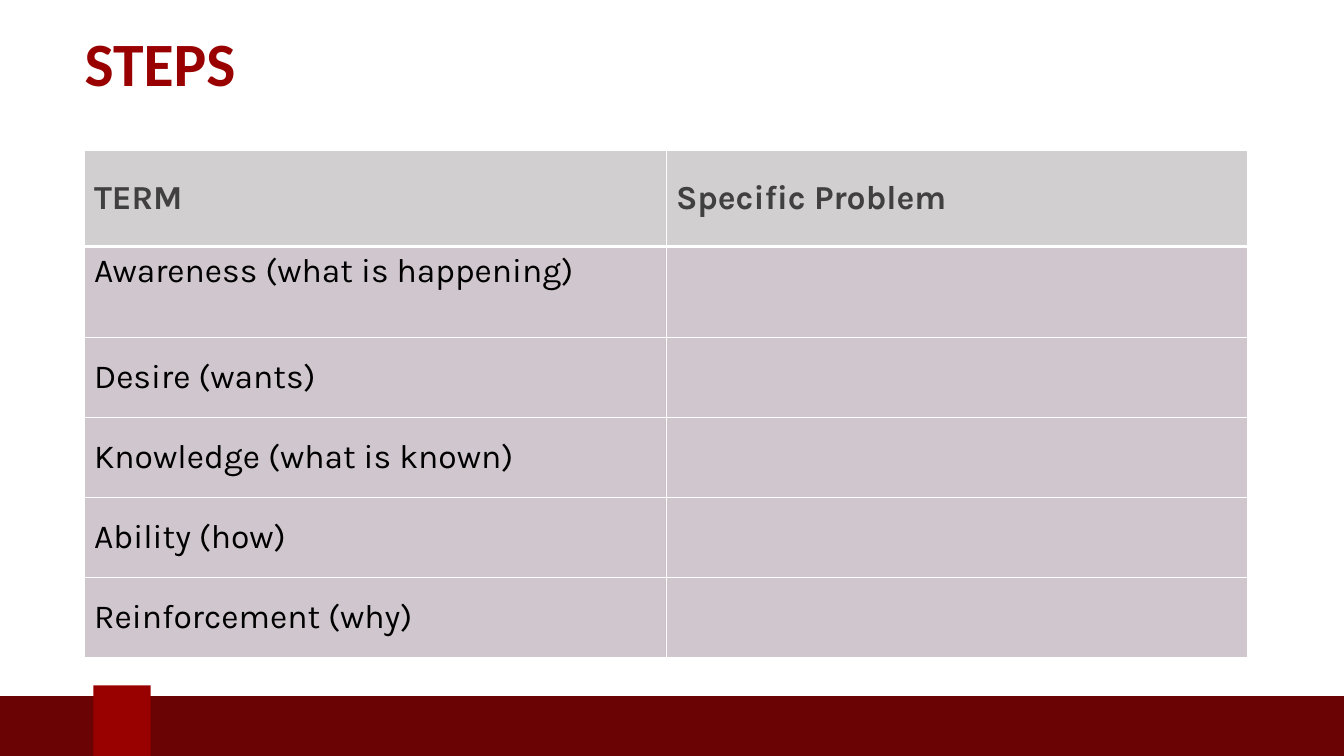
from lxml import etree
from pptx import Presentation
from pptx.dml.color import RGBColor
from pptx.enum.shapes import MSO_SHAPE
from pptx.enum.text import MSO_ANCHOR
from pptx.oxml.ns import qn
from pptx.util import Pt

PX = 9144  # EMU per px, 100 px to the inch
RECTANGLE = MSO_SHAPE.RECTANGLE
TOP, MIDDLE = MSO_ANCHOR.TOP, MSO_ANCHOR.MIDDLE

WHITE = RGBColor(0xFF, 0xFF, 0xFF)
BLACK = RGBColor(0x00, 0x00, 0x00)
CHARCOAL = RGBColor(0x40, 0x40, 0x40)
GREY = RGBColor(0xAF, 0xAB, 0xAB)
MAUVE = RGBColor(0x66, 0x43, 0x5A)
RED = RGBColor(0x99, 0x00, 0x00)
DARK_RED = RGBColor(0x69, 0x03, 0x04)

TITLE_FONT = {"name": "Calibri", "size": Pt(66), "bold": True}
HEADER_FONT = {"name": "Karla", "size": Pt(36), "bold": True}
BODY_FONT = {"name": "Karla", "size": Pt(36), "bold": False}
CELL_MARGINS = {"margin_left": 15 * PX, "margin_right": 15 * PX,
                "margin_top": 7 * PX, "margin_bottom": 7 * PX}

ROW_HEIGHTS = [143, 135, 119, 119, 119, 119]
ROWS = [
    ("TERM", "Specific Problem"),
    ("Awareness (what is happening)", ""),
    ("Desire (wants)", ""),
    ("Knowledge (what is known)", ""),
    ("Ability (how)", ""),
    ("Reinforcement (why)", ""),
]


def to_emu(box):
    return [length * PX for length in box]


def set_values(target, values):
    for name, value in values.items():
        setattr(target, name, value)


def write(frame, text, font, color):
    para = frame.paragraphs[0]
    span = para.add_run()
    span.text = text
    set_values(span.font, font)
    span.font.color.rgb = color
    return para


def add_bar(page, box, color):
    bar = page.shapes.add_shape(RECTANGLE, *to_emu(box))
    bar.shadow.inherit = False
    bar.fill.solid()
    bar.fill.fore_color.rgb = color
    bar.line.fill.background()


def add_footer(page, box):
    left, top, width, height = box
    add_bar(page, box, DARK_RED)
    add_bar(page, (left + 146, top - 16, 85, height + 16), RED)


def add_title(page, box, text):
    frame = page.shapes.add_textbox(*to_emu(box)).text_frame
    frame.word_wrap = True
    frame.vertical_anchor = MIDDLE
    para = write(frame, text, TITLE_FONT, RED)
    para.line_spacing = 0.9


def fill_cell(cell, color, opacity):
    cell.fill.solid()
    cell.fill.fore_color.rgb = color
    color_node = cell._tc.tcPr.find(".//" + qn("a:srgbClr"))
    etree.SubElement(color_node, qn("a:alpha"), val=str(opacity * 1000))


def add_borders(cell, widths):
    # Borders stand before the fill in the cell properties
    for position, (side, points) in enumerate(widths.items()):
        line = etree.Element(qn("a:" + side), w=str(Pt(points)))
        fill = etree.SubElement(line, qn("a:solidFill"))
        etree.SubElement(fill, qn("a:srgbClr"), val=str(WHITE))
        cell._tc.tcPr.insert(position, line)


def add_terms_table(page, box):
    table = page.shapes.add_table(len(ROWS), len(ROWS[0]), *to_emu(box)).table
    for column in table.columns:
        column.width = box[2] * PX // len(ROWS[0])

    for index, (texts, height) in enumerate(zip(ROWS, ROW_HEIGHTS)):
        table.rows[index].height = height * PX
        is_header = index == 0
        font, color = (HEADER_FONT, CHARCOAL) if is_header else (BODY_FONT, BLACK)
        for cell, text in zip(table.rows[index].cells, texts):
            set_values(cell, CELL_MARGINS)
            cell.vertical_anchor = TOP if index == 1 else MIDDLE
            fill_cell(cell, *((GREY, 57) if is_header else (MAUVE, 30)))
            add_borders(cell, {"lnL": 1, "lnR": 1,
                               "lnT": 3 if index == 1 else 1,
                               "lnB": 3 if is_header else 1})
            if text:
                write(cell.text_frame, text, font, color)


def main():
    deck = Presentation()
    deck.slide_width, deck.slide_height = 2000 * PX, 1125 * PX
    page = deck.slides.add_slide(deck.slide_layouts[6])
    add_footer(page, (-7, 1036, 2019, 100))
    add_title(page, (116, 23, 1751, 153), "STEPS")
    add_terms_table(page, (125, 224, 1732, sum(ROW_HEIGHTS)))
    deck.save("out.pptx")


if __name__ == "__main__":
    main()
